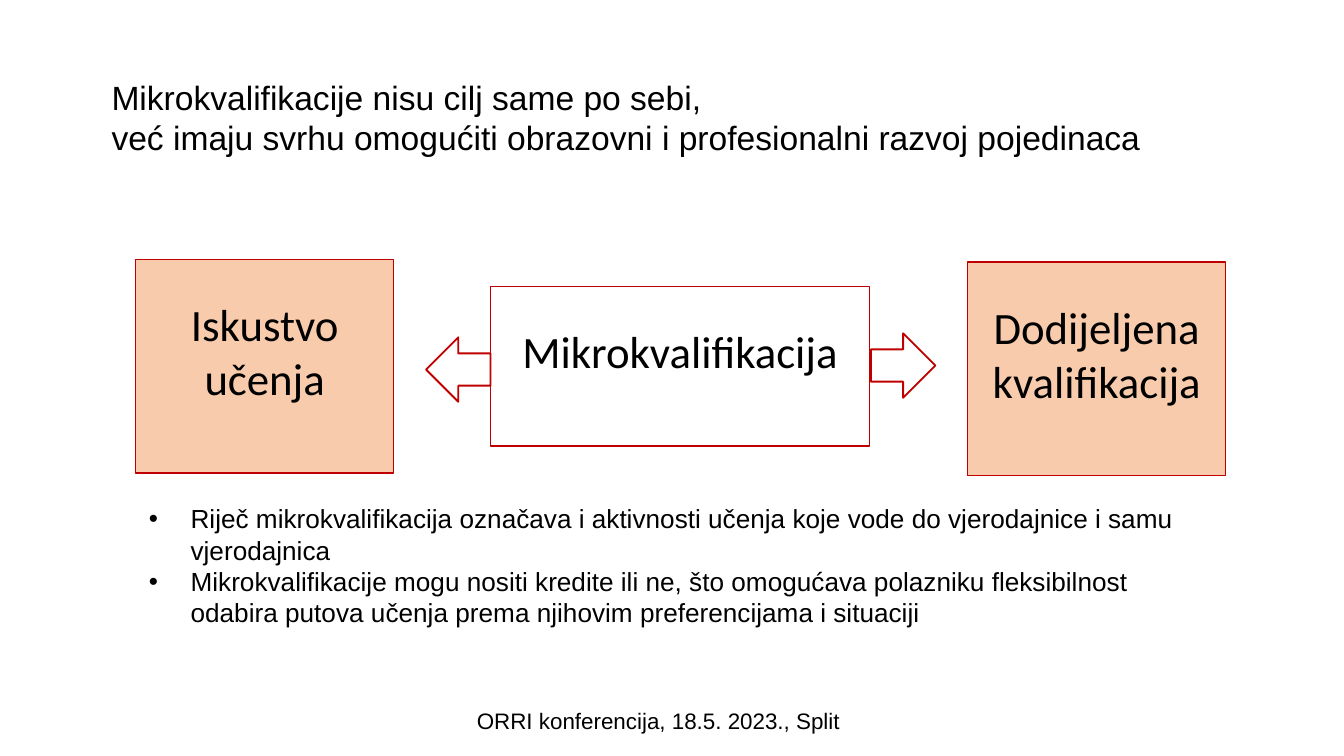
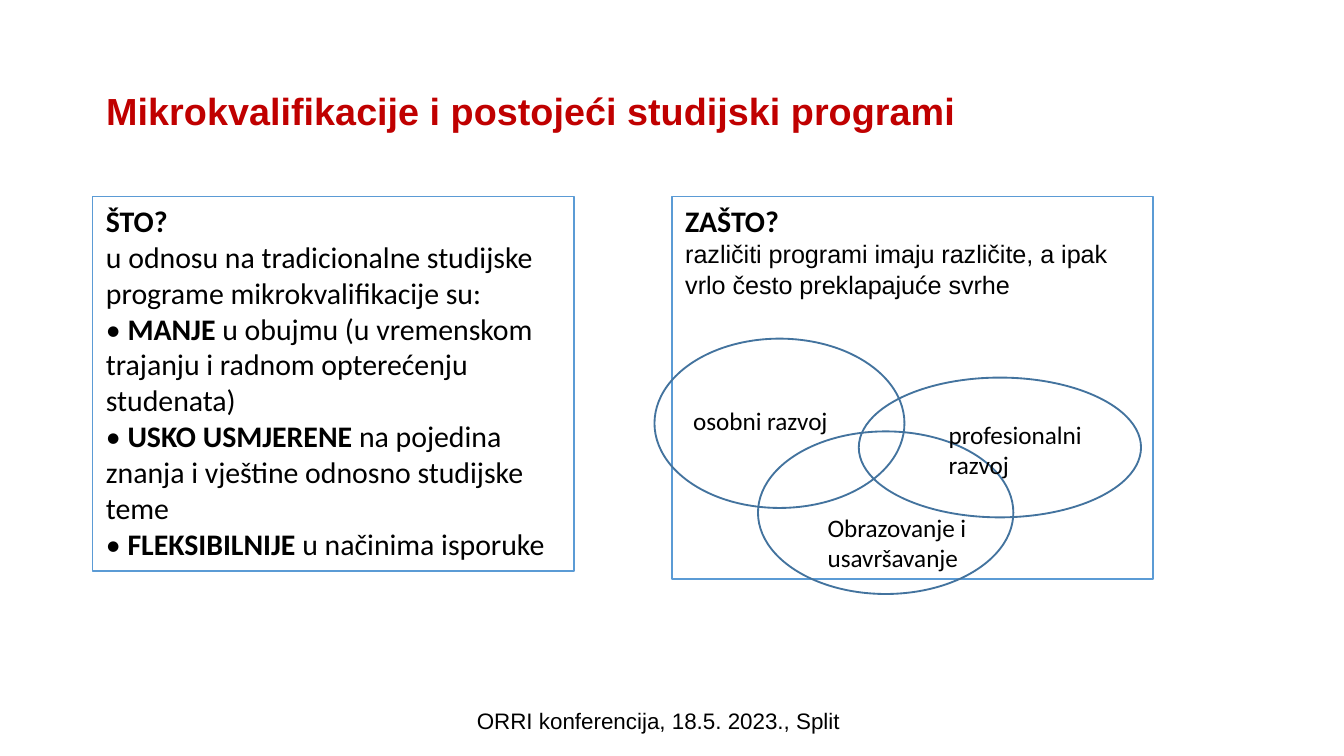
from lxml.etree import SubElement
from pptx import Presentation
from pptx.dml.color import RGBColor
from pptx.enum.shapes import MSO_SHAPE
from pptx.enum.text import MSO_ANCHOR, MSO_AUTO_SIZE, PP_ALIGN
from pptx.oxml.ns import qn
from pptx.util import Inches, Pt

BLACK = RGBColor(0x00, 0x00, 0x00)
RED = RGBColor(0xC0, 0x00, 0x00)
PEACH = RGBColor(0xF8, 0xCB, 0xAD)
LIGHT_BLUE = RGBColor(0x5B, 0x9B, 0xD5)
DARK_BLUE = RGBColor(0x43, 0x73, 0x9E)
FOOTER = "ORRI konferencija, 18.5. 2023., Split"
TITLE_ONLY = 5


def write(frame, text, size, font="Calibri", color=BLACK, align=PP_ALIGN.LEFT,
          spacing=None, bullet=False):
    """Add one paragraph; **marks** give bold and newlines give line breaks."""
    para = frame.paragraphs[0]
    if para.runs:
        para = frame.add_paragraph()
    if bullet:
        properties = para._p.get_or_add_pPr()
        properties.set("marL", str(Inches(0.31)))
        properties.set("indent", str(-Inches(0.31)))
        SubElement(properties, qn("a:buFont"), typeface="Arial")
        SubElement(properties, qn("a:buChar"), char="•")
    para.alignment = align
    if spacing:
        para.line_spacing = spacing
    for part, piece in enumerate(text.split("**")):
        for row, line in enumerate(piece.split("\n")):
            if row:
                para.add_line_break()
            if line:
                span = para.add_run()
                span.text = line
                span.font.name = font
                span.font.size = Pt(size)
                span.font.bold = part % 2 == 1
                span.font.color.rgb = color


class Builder:
    """Holds the deck, its shared style and the current slide."""

    def __init__(self):
        self.deck = Presentation()
        self.deck.slide_width = Inches(10)
        self.deck.slide_height = self.deck.slide_width * 9 // 16
        self.page = None

    def add_page(self, title, place, anchor=MSO_ANCHOR.MIDDLE, **style):
        self.page = self.deck.slides.add_slide(self.deck.slide_layouts[TITLE_ONLY])
        box = self.page.shapes.title
        box.left, box.top, box.width, box.height = map(Inches, place)
        self.prepare(box.text_frame, anchor)
        write(box.text_frame, title, font="Arial", **style)

    def prepare(self, frame, anchor=MSO_ANCHOR.TOP):
        frame.word_wrap = True
        frame.auto_size = MSO_AUTO_SIZE.NONE
        frame.vertical_anchor = anchor
        return frame

    def add_text(self, place, *paragraphs, anchor=MSO_ANCHOR.TOP, **style):
        box = self.page.shapes.add_textbox(*map(Inches, place))
        frame = self.prepare(box.text_frame, anchor)
        for text in paragraphs:
            write(frame, text, **style)

    def add_outline(self, kind, place, line, weight=0.75, fill=None):
        shape = self.page.shapes.add_shape(kind, *map(Inches, place))
        shape.shadow.inherit = False
        if fill is None:
            shape.fill.background()
        else:
            shape.fill.solid()
            shape.fill.fore_color.rgb = fill
        shape.line.color.rgb = line
        shape.line.width = Pt(weight)
        return self.prepare(shape.text_frame)

    def add_card(self, place, text, fill=None):
        frame = self.add_outline(MSO_SHAPE.RECTANGLE, place, RED, fill=fill)
        frame.margin_top = Inches(0.28)
        write(frame, text, 24, align=PP_ALIGN.CENTER)

    def add_panel(self, place, heading, text, **style):
        frame = self.add_outline(MSO_SHAPE.RECTANGLE, place, LIGHT_BLUE)
        write(frame, f"**{heading}**", 16)
        write(frame, text, **style)

    def add_footer(self):
        self.add_text((1.74, 5.21, 6.32, 0.3), FOOTER, anchor=MSO_ANCHOR.MIDDLE,
                      size=12, font="Arial", align=PP_ALIGN.CENTER)


def build_purpose(builder):
    builder.add_page("Mikrokvalifikacije nisu cilj same po sebi,\n"
                     "već imaju svrhu omogućiti obrazovni i profesionalni razvoj pojedinaca",
                     (0.73, 0.52, 8.18, 0.71), anchor=MSO_ANCHOR.TOP, size=18)

    # Micro-credential between its two meanings
    builder.add_card((1.01, 1.93, 1.92, 1.59), "Iskustvo učenja", PEACH)
    builder.add_card((3.65, 2.13, 2.82, 1.19), "Mikrokvalifikacija")
    builder.add_card((7.2, 1.95, 1.92, 1.59), "Dodijeljena\nkvalifikacija", PEACH)
    for kind, left, top in ((MSO_SHAPE.LEFT_ARROW, 3.17, 2.51),
                            (MSO_SHAPE.RIGHT_ARROW, 6.48, 2.48)):
        builder.add_outline(kind, (left, top, 0.48, 0.48), RED, weight=1)

    # Explanation
    builder.add_text(
        (1.01, 3.69, 8.11, 1.04),
        "Riječ mikrokvalifikacija označava i aktivnosti učenja koje vode do "
        "vjerodajnice i samu vjerodajnica",
        "Mikrokvalifikacije mogu nositi kredite ili ne, što omogućava polazniku "
        "fleksibilnost odabira putova učenja prema njihovim preferencijama i situaciji",
        size=14, font="Arial", bullet=True)
    builder.add_footer()


def build_programmes(builder):
    builder.add_page("**Mikrokvalifikacije i postojeći studijski programi**",
                     (0.69, 0.3, 8.62, 1.09), size=20.25, color=RED, spacing=0.9)

    # What and why
    builder.add_panel(
        (0.69, 1.46, 3.58, 2.79), "ŠTO?",
        "u odnosu na tradicionalne studijske\nprograme mikrokvalifikacije su:\n"
        "• **MANJE** u obujmu (u vremenskom\ntrajanju i radnom opterećenju\nstudenata)\n"
        "• **USKO USMJERENE **na pojedina\nznanja i vještine odnosno studijske\nteme\n"
        "• **FLEKSIBILNIJE** u načinima isporuke", size=16)
    builder.add_panel(
        (5, 1.46, 3.58, 2.85), "ZAŠTO?",
        "različiti programi imaju različite, a ipak vrlo često preklapajuće svrhe",
        size=13.5, font="Arial")

    # Overlapping purposes
    purposes = (
        ("osobni razvoj", (4.87, 2.52, 1.86, 1.26), (5.06, 2.97, 1.24, 0.34)),
        ("Obrazovanje i usavršavanje", (5.64, 3.21, 1.9, 1.21), (6.06, 3.76, 1.55, 0.56)),
        ("profesionalni razvoj", (6.39, 2.81, 2.1, 1.04), (6.96, 3.07, 1.55, 0.56)),
    )
    for _, oval, _ in purposes:
        builder.add_outline(MSO_SHAPE.OVAL, oval, DARK_BLUE, weight=1)
    for text, _, place in purposes:
        builder.add_text(place, text, size=13.5)
    builder.add_footer()


def main():
    builder = Builder()
    build_purpose(builder)
    build_programmes(builder)
    builder.deck.save("out.pptx")


if __name__ == "__main__":
    main()
